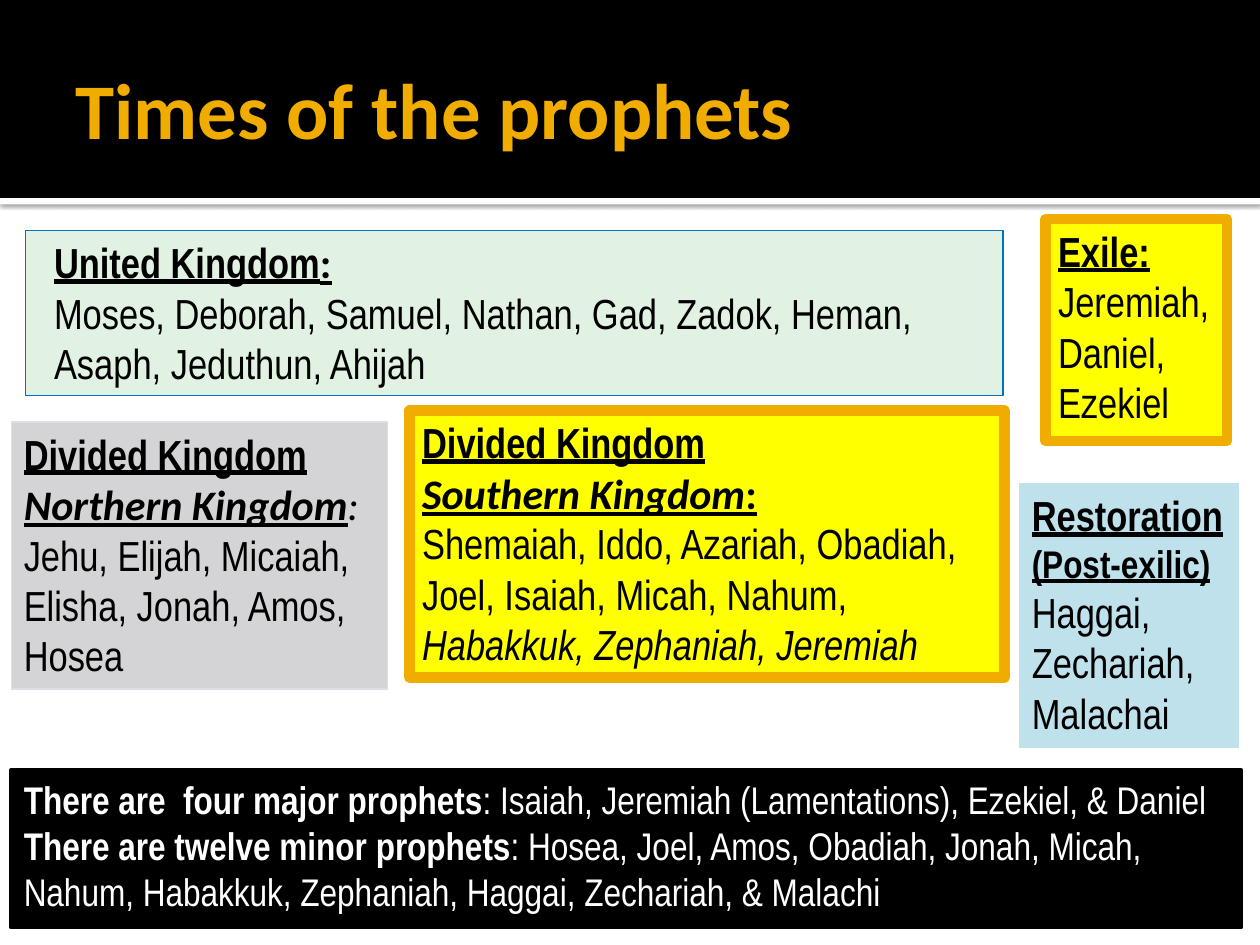
from lxml import etree
from pptx import Presentation
from pptx.dml.color import RGBColor
from pptx.enum.shapes import MSO_SHAPE
from pptx.enum.text import MSO_ANCHOR, PP_ALIGN
from pptx.oxml.ns import qn
from pptx.util import Cm, Pt

RECT = MSO_SHAPE.RECTANGLE
TOP, MIDDLE = MSO_ANCHOR.TOP, MSO_ANCHOR.MIDDLE
LEFT = PP_ALIGN.LEFT
NARROW, ROUND = "Arial Narrow", "Calibri"
BLACK, WHITE, GOLD, YELLOW = "000000", "FFFFFF", "F0AD00", "FFFF00"
HEAD = {"bold": True, "line": True}
REALM = {**HEAD, "font": ROUND, "italic": True}

# Each era: box in cm, fill, edge, edge width, indent in cm, paragraphs of runs
ERAS = [
    ((0.23, 8.51, 7.59, 5.38), "D4D4D6", "DDDFE5", 0.75, 0, [
        [("Divided Kingdom", HEAD)],
        [("Northern Kingdom", REALM), (":", {"font": ROUND, "italic": True})],
        [("Jehu, Elijah, Micaiah,", {})],
        [("Elisha, Jonah, Amos,", {})],
        [("Hosea", {})]]),
    ((8.26, 8.28, 11.99, 5.38), YELLOW, GOLD, 6, 0, [
        [("Divided Kingdom", HEAD)],
        [("Southern Kingdom", REALM), (":", {**HEAD, "font": ROUND})],
        [("Shemaiah, Iddo, Azariah, Obadiah, Joel, Isaiah, Micah, Nahum, ", {}),
         ("Habakkuk, Zephaniah, Jeremiah", {"italic": True})]]),
    ((20.55, 9.75, 4.42, 5.31), "BFE1EB", "BFE1EB", 0.75, 0, [
        [("Restoration", HEAD), ("(Post-exilic)", {**HEAD, "size": 22})],
        [("Haggai, Zechariah, Malachai", {})]]),
    ((21.08, 4.42, 3.66, 4.47), YELLOW, GOLD, 6, 0, [
        [("Exile:", HEAD)],
        [("Jeremiah, Daniel, Ezekiel", {})]]),
    ((0.51, 4.65, 19.71, 3.33), "E1F1E2", "0070C0", 0.75, 0.33, [
        [("United Kingdom", HEAD), (":", {**HEAD, "font": ROUND})],
        [("Moses, Deborah, Samuel, Nathan, Gad, Zadok, Heman, "
          "Asaph, Jeduthun, Ahijah", {})]]),
]

NOTE = {"size": 22, "color": WHITE}
GROUPS = [
    ("There are  four major prophets",
     ": Isaiah, Jeremiah (Lamentations), Ezekiel, & Daniel"),
    ("There are twelve minor prophets",
     ": Hosea, Joel, Amos, Obadiah, Jonah, Micah, Nahum, Habakkuk, "
     "Zephaniah, Haggai, Zechariah, & Malachi"),
]


def rgb(code):
    return RGBColor.from_string(code)


def write(para, text, font=NARROW, size=24, color=BLACK, bold=False,
          italic=False, line=False):
    run = para.add_run()
    run.text = text
    face = run.font
    face.name, face.size = font, Pt(size)
    face.bold, face.italic, face.underline = bold, italic, line
    face.color.rgb = rgb(color)


def block(slide, box, fill, edge=None, width=0.75):
    shape = slide.shapes.add_shape(RECT, *map(Cm, box))
    shape.shadow.inherit = False
    shape.fill.solid()
    shape.fill.fore_color.rgb = rgb(fill)
    if edge:
        shape.line.color.rgb = rgb(edge)
        shape.line.width = Pt(width)
    else:
        shape.line.fill.background()
    return shape


def panel(slide, box, fill, edge, width, indent, paras):
    frame = block(slide, box, fill, edge, width).text_frame
    frame.word_wrap = True
    frame.vertical_anchor = TOP
    for i, runs in enumerate(paras):
        para = frame.paragraphs[0] if i == 0 else frame.add_paragraph()
        para.alignment = LEFT
        if indent:
            para._p.get_or_add_pPr().set("marL", str(Cm(indent)))
        for text, form in runs:
            write(para, text, **form)


def shade(shape):
    """Cast a soft shadow straight down."""
    effects = shape._element.spPr.find(qn("a:effectLst"))
    outer = etree.SubElement(effects, qn("a:outerShdw"), blurRad=str(Pt(2.5)),
                             dist=str(Pt(0.8)), dir="5400000", rotWithShape="0")
    color = etree.SubElement(outer, qn("a:srgbClr"), val=BLACK)
    etree.SubElement(color, qn("a:alpha"), val="60000")


def header(slide, box, text):
    left, top, width, height = box
    shade(block(slide, (left, top + height, width, 0.13), WHITE))
    block(slide, box, BLACK)
    title = slide.shapes.title
    title.left, title.top = Cm(left + 1.27), Cm(top + 0.43)
    title.width, title.height = Cm(width - 2.54), Cm(height - 0.51)
    slide.shapes._spTree.append(title._element)  # in front of the bands
    frame = title.text_frame
    frame.margin_right = Cm(0.13)
    frame.vertical_anchor = MIDDLE
    para = frame.paragraphs[0]
    para.alignment = LEFT
    write(para, text, font=ROUND, size=45, color=GOLD, bold=True)


def footer(slide, box):
    paras = [[(lead, {**NOTE, "bold": True}), (names, NOTE)]
             for lead, names in GROUPS]
    panel(slide, box, BLACK, BLACK, 2.25, 0, paras)


def main():
    deck = Presentation()
    deck.slide_width, deck.slide_height = Cm(25.4), Cm(19.05)
    slide = deck.slides.add_slide(deck.slide_layouts[5])
    header(slide, (0, 0, 25.4, 3.99), "Times of the prophets")
    for era in ERAS:
        panel(slide, *era)
    footer(slide, (0.23, 15.52, 24.79, 3.18))
    deck.save("out.pptx")


if __name__ == "__main__":
    main()
